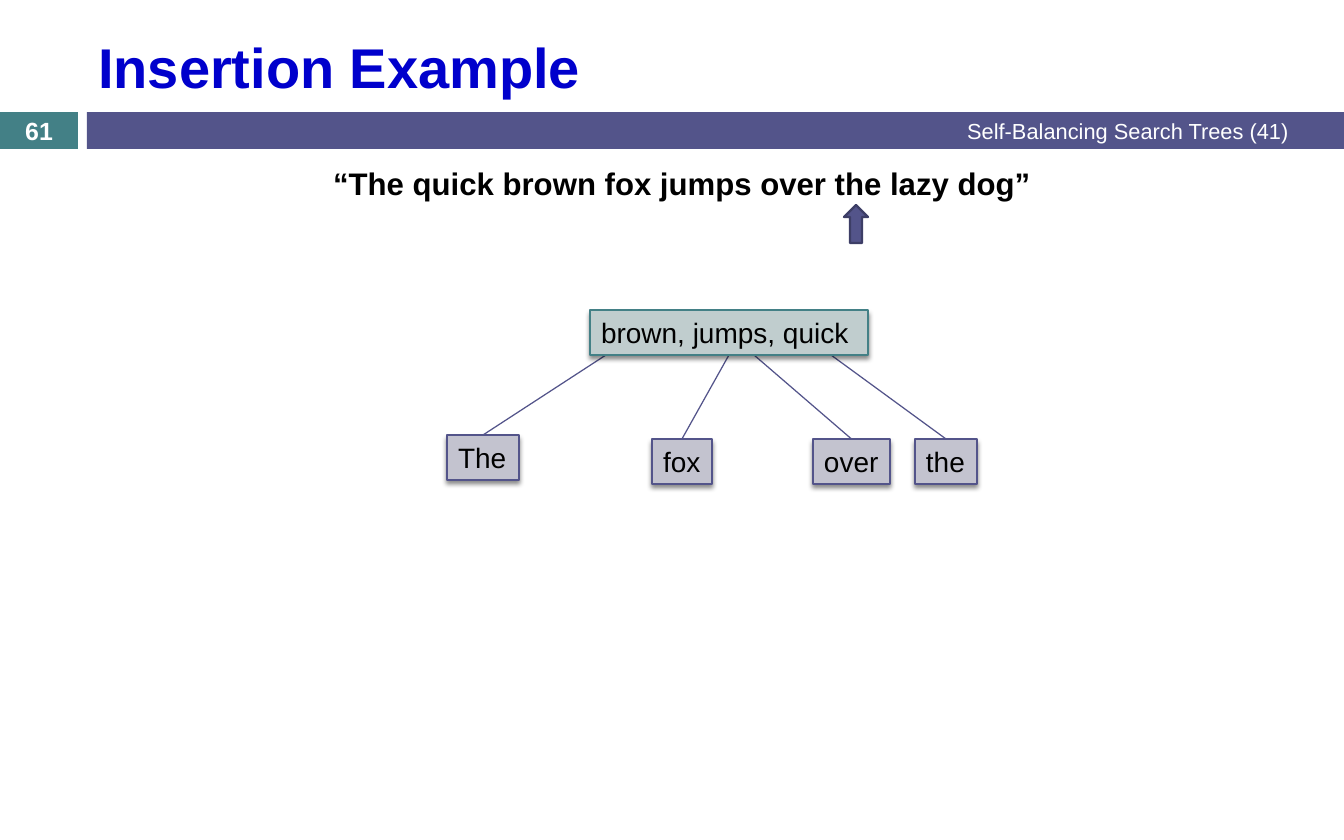
from dataclasses import dataclass

from lxml import etree
from pptx import Presentation
from pptx import util as u
from pptx.dml.color import RGBColor
from pptx.enum import shapes, text
from pptx.oxml import parse_xml
from pptx.oxml.ns import nsdecls, qn


@dataclass(frozen=True)
class Theme:
    font: str = "Arial"
    purple: str = "53548A"
    purple_dark: str = "3D3E66"
    purple_pale: str = "C3C3CF"
    teal: str = "438086"
    teal_pale: str = "C0CDCE"
    blue: str = "0000CC"
    black: str = "000000"
    white: str = "FFFFFF"
    title: int = 36
    quote: int = 20
    node: int = 18
    number: int = 16
    footer: int = 14
    thin: float = 0.79
    thick: float = 1.5


T = Theme()
PX = 914400 / 112
SHADOW = (
    f'<a:outerShdw {nsdecls("a")} blurRad="38100" dist="30000" dir="5400000" rotWithShape="0">'
    '<a:srgbClr val="000000"><a:alpha val="45000"/></a:srgbClr></a:outerShdw>'
)


def add_box(kind, box, fill, line=None, width=T.thin):
    sp = s.shapes.add_shape(kind, *[round(v * PX) for v in box])
    sp.shadow.inherit = False
    sp.fill.solid()
    sp.fill.fore_color.rgb = RGBColor.from_string(fill)
    if line:
        sp.line.color.rgb = RGBColor.from_string(line)
        sp.line.width = u.Pt(width)
    else:
        sp.line.fill.background()
    return sp


def write(sp, words, size, color, bold=False, align=text.PP_ALIGN.LEFT,
          anchor=text.MSO_ANCHOR.MIDDLE, wrap=True):
    tf = sp.text_frame
    tf.word_wrap = wrap
    tf.auto_size = text.MSO_AUTO_SIZE.NONE
    tf.vertical_anchor = anchor
    p = tf.paragraphs[0]
    p.alignment = align
    r = p.add_run()
    r.text = words
    r.font.name = T.font
    r.font.size = u.Pt(size)
    r.font.bold = bold
    r.font.color.rgb = RGBColor.from_string(color)
    return p


prs = Presentation()
prs.slide_width, prs.slide_height = u.Inches(12), u.Inches(7.5)
s = prs.slides.add_slide(prs.slide_layouts[1])

# Title and sentence
title, body = s.placeholders
for sp, box in ((title, (87, 21, 1198, 90)), (body, (187, 159, 999, 56))):
    sp.left, sp.top, sp.width, sp.height = [round(v * PX) for v in box]
write(title, "Insertion Example", T.title, T.blue, bold=True)
p = write(body, "“The quick brown fox jumps over the lazy dog” ", T.quote, T.black,
          bold=True, align=text.PP_ALIGN.CENTER, anchor=text.MSO_ANCHOR.TOP)
p.space_before = u.Pt(7)
pPr = p._p.get_or_add_pPr()
pPr.set("marL", "0")
pPr.set("indent", "0")
etree.SubElement(pPr, qn("a:buNone"))

# Header band with page number and section name
rect = shapes.MSO_SHAPE.RECTANGLE
number = add_box(rect, (0, 112, 78, 37), T.teal)
write(number, "61", T.number, T.white, bold=True, align=text.PP_ALIGN.CENTER)
add_box(rect, (87, 112, 1257, 37), T.purple)
footer = s.shapes.add_textbox(*[round(v * PX) for v in (504, 111, 796, 40)])
write(footer, "Self-Balancing Search Trees (41)", T.footer, T.white,
      align=text.PP_ALIGN.RIGHT)

# Tree: the root, then leaves as word, left, top, width, x where the edge meets the root
NODE_H = 45
ROOT_TOP = 310
leaves = [
    ("The", 447, 435, 72, 606),
    ("fox", 652, 439, 60, 729),
    ("over", 813, 439, 77, 754),
    ("the", 915, 439, 62, 831),
]
nodes = [("brown, jumps, quick", 590, ROOT_TOP, 278, T.teal_pale, T.teal)]
for word, left, top, width, root_x in leaves:
    nodes.append((word, left, top, width, T.purple_pale, T.purple))
    ends = (root_x, ROOT_TOP + NODE_H, left + width / 2, top)
    edge = s.shapes.add_connector(shapes.MSO_CONNECTOR.STRAIGHT,
                                  *[round(v * PX) for v in ends])
    edge.line.color.rgb = RGBColor.from_string(T.purple)
    edge.line.width = u.Pt(T.thin)
    etree.SubElement(edge._element.spPr, qn("a:effectLst"))

for word, left, top, width, fill, line in nodes:
    sp = add_box(rect, (left, top, width, NODE_H), fill, line)
    sp._element.spPr.find(qn("a:effectLst")).append(parse_xml(SHADOW))
    write(sp, word, T.node, T.black, anchor=text.MSO_ANCHOR.TOP, wrap=line == T.teal)

# Pointer to the current word
pointer = add_box(shapes.MSO_SHAPE.DOWN_ARROW, (844, 205, 24, 38),
                  T.purple, T.purple_dark, T.thick)
pointer.rotation = 180

prs.save("out.pptx")
